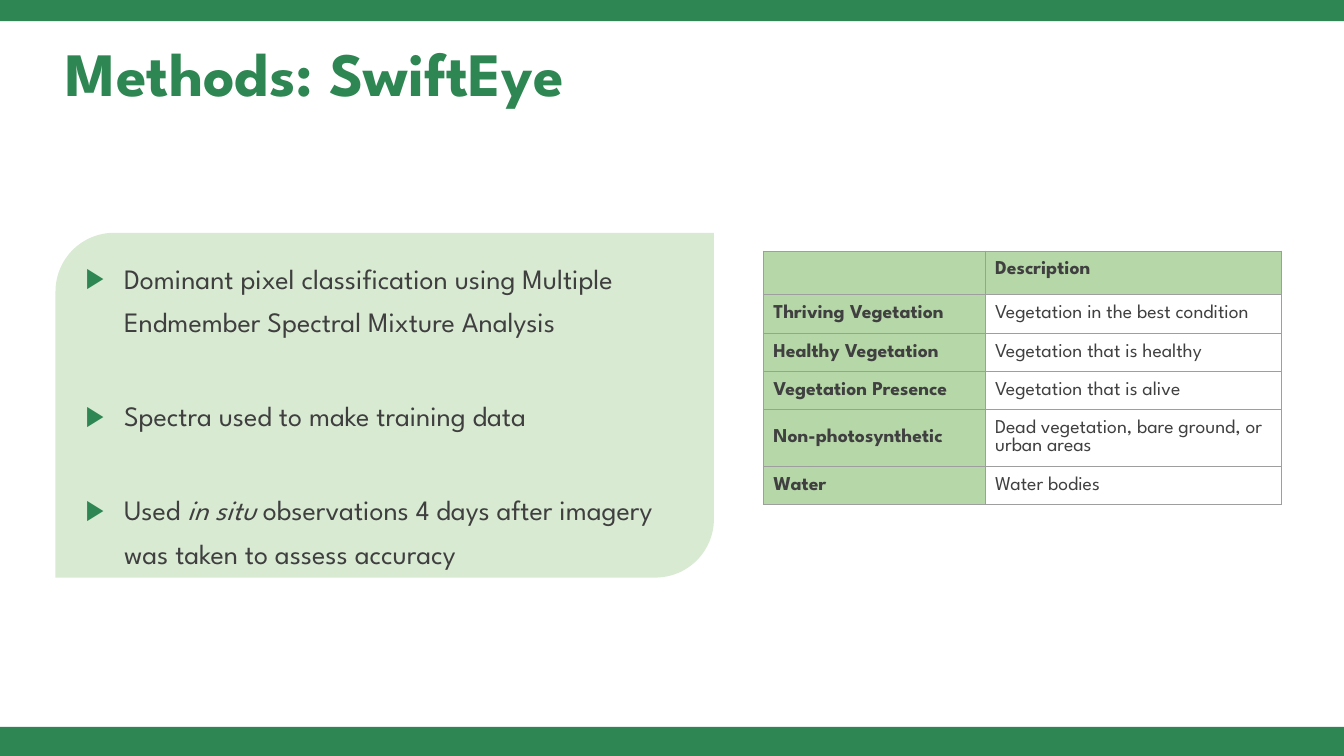
from dataclasses import dataclass

from lxml import etree
from pptx import Presentation
from pptx.dml.color import RGBColor
from pptx.enum.shapes import MSO_SHAPE
from pptx.enum.text import MSO_ANCHOR, MSO_AUTO_SIZE, PP_ALIGN
from pptx.oxml.ns import qn
from pptx.util import Inches, Pt

RECT = MSO_SHAPE.RECTANGLE
LEAF = MSO_SHAPE.ROUND_2_DIAG_RECTANGLE
TOP, MIDDLE = MSO_ANCHOR.TOP, MSO_ANCHOR.MIDDLE
LEFT = PP_ALIGN.LEFT
NO_FIT = MSO_AUTO_SIZE.NONE

WIDTH, HEIGHT = Inches(13.33), Inches(7.5)


@dataclass(frozen=True)
class Theme:
    font: str = "League Spartan"
    green: str = "2E8652"
    panel: str = "D9EAD3"
    label: str = "B6D7A8"
    white: str = "FFFFFF"
    border: str = "9E9E9E"
    text: str = "3F3F3F"
    cell_text: str = "404040"
    title_size: int = 44
    body_size: int = 20
    table_size: int = 14


THEME = Theme()

BULLETS = [
    [("Dominant pixel classification using Multiple Endmember Spectral Mixture Analysis", False)],
    [("Spectra used to make training data", False)],
    [
        ("Used ", False),
        ("in situ ", True),
        ("observations 4 days after imagery was taken to assess accuracy", False),
    ],
]

CLASSES = [
    ("", "Description"),
    ("Thriving Vegetation", "Vegetation in the best condition"),
    ("Healthy Vegetation", "Vegetation that is healthy"),
    ("Vegetation Presence", "Vegetation that is alive"),
    ("Non-photosynthetic", "Dead vegetation, bare ground, or urban areas"),
    ("Water", "Water bodies"),
]
COLUMN_SHARES = [16.5, 22.06]
ROW_SHARES = [5.8, 5.08, 5.08, 5.08, 7.45, 5.08]


def across(share):
    return int(WIDTH * share / 100)


def down(share):
    return int(HEIGHT * share / 100)


def box(x, y, w, h):
    return across(x), down(y), across(w), down(h)


def place(sp, *shares):
    sp.left, sp.top, sp.width, sp.height = box(*shares)


def add_run(p, text, size, color, bold=False, italic=False):
    r = p.add_run()
    r.text = text
    r.font.name = THEME.font
    r.font.size = Pt(size)
    r.font.bold = bold
    r.font.italic = italic
    r.font.color.rgb = RGBColor.from_string(color)


def add_block(s, kind, color, *shares):
    sp = s.shapes.add_shape(kind, *box(*shares))
    sp.shadow.inherit = False
    sp.fill.solid()
    sp.fill.fore_color.rgb = RGBColor.from_string(color)
    sp.line.fill.background()
    return sp


def set_bullet(p):
    pPr = p._p.get_or_add_pPr()
    pPr.set("marL", str(Inches(0.38)))
    pPr.set("indent", str(-Inches(0.38)))
    color = etree.SubElement(pPr, qn("a:buClr"))
    etree.SubElement(color, qn("a:srgbClr"), val=THEME.green)
    etree.SubElement(pPr, qn("a:buFont"), typeface="Arial")
    etree.SubElement(pPr, qn("a:buChar"), char="▶")


def fill_title(sp, text):
    place(sp, 4.13, 6.4, 91.82, 7.47)
    tf = sp.text_frame
    tf.auto_size = NO_FIT
    tf.vertical_anchor = MIDDLE
    p = tf.paragraphs[0]
    p.alignment = LEFT
    p.line_spacing = 0.9
    add_run(p, text, THEME.title_size, THEME.green, bold=True)


def fill_list(sp, items):
    place(sp, 5.63, 31.87, 47.49, 49.33)
    tf = sp.text_frame
    tf.auto_size = NO_FIT
    tf.vertical_anchor = TOP
    tf.margin_left = tf.margin_right = tf.margin_top = tf.margin_bottom = Inches(0.1)
    for i, item in enumerate(items):
        p = tf.add_paragraph() if i else tf.paragraphs[0]
        p.alignment = LEFT
        p.line_spacing = 1.3
        p.space_before = Pt(36 if i else 6)
        set_bullet(p)
        for text, italic in item:
            add_run(p, text, THEME.body_size, THEME.text, italic=italic)


def set_borders(cell):
    tcPr = cell._tc.get_or_add_tcPr()
    for side in ("a:lnL", "a:lnR", "a:lnT", "a:lnB"):
        ln = etree.SubElement(tcPr, qn(side), w=str(Pt(0.75)))
        fill = etree.SubElement(ln, qn("a:solidFill"))
        etree.SubElement(fill, qn("a:srgbClr"), val=THEME.border)


def fill_cell(cell, text, is_label, is_header):
    set_borders(cell)
    cell.fill.solid()
    shaded = is_label or is_header
    cell.fill.fore_color.rgb = RGBColor.from_string(THEME.label if shaded else THEME.white)
    if text:
        cell.margin_left = cell.margin_right = Inches(0.1)
        cell.margin_top = cell.margin_bottom = Inches(0.1)
        cell.vertical_anchor = MIDDLE if is_label else TOP
        p = cell.text_frame.paragraphs[0]
        add_run(p, text, THEME.table_size, THEME.cell_text, bold=shaded)


def add_class_table(s):
    shares = box(56.79, 33.2, sum(COLUMN_SHARES), sum(ROW_SHARES))
    table = s.shapes.add_table(len(CLASSES), len(COLUMN_SHARES), *shares).table
    table.first_row = table.horz_banding = False
    for column, share in zip(table.columns, COLUMN_SHARES):
        column.width = across(share)
    for row, share in zip(table.rows, ROW_SHARES):
        row.height = down(share)
    for i, texts in enumerate(CLASSES):
        for j, text in enumerate(texts):
            fill_cell(table.cell(i, j), text, j == 0, i == 0)


def main():
    prs = Presentation()
    prs.slide_width, prs.slide_height = WIDTH, HEIGHT
    s = prs.slides.add_slide(prs.slide_layouts[1])
    title, body = s.placeholders
    add_block(s, RECT, THEME.green, 0, 0, 100, 2.8)
    add_block(s, RECT, THEME.green, 0, 96.13, 100, 3.87)
    panel = add_block(s, LEAF, THEME.panel, 4.13, 30.8, 48.99, 45.6)
    panel.adjustments[0] = 0.17
    panel.adjustments[1] = 0
    for sp in (title, body):
        s.shapes._spTree.append(sp._element)
    fill_title(title, "Methods: SwiftEye")
    fill_list(body, BULLETS)
    add_class_table(s)
    prs.save("out.pptx")


if __name__ == "__main__":
    main()
